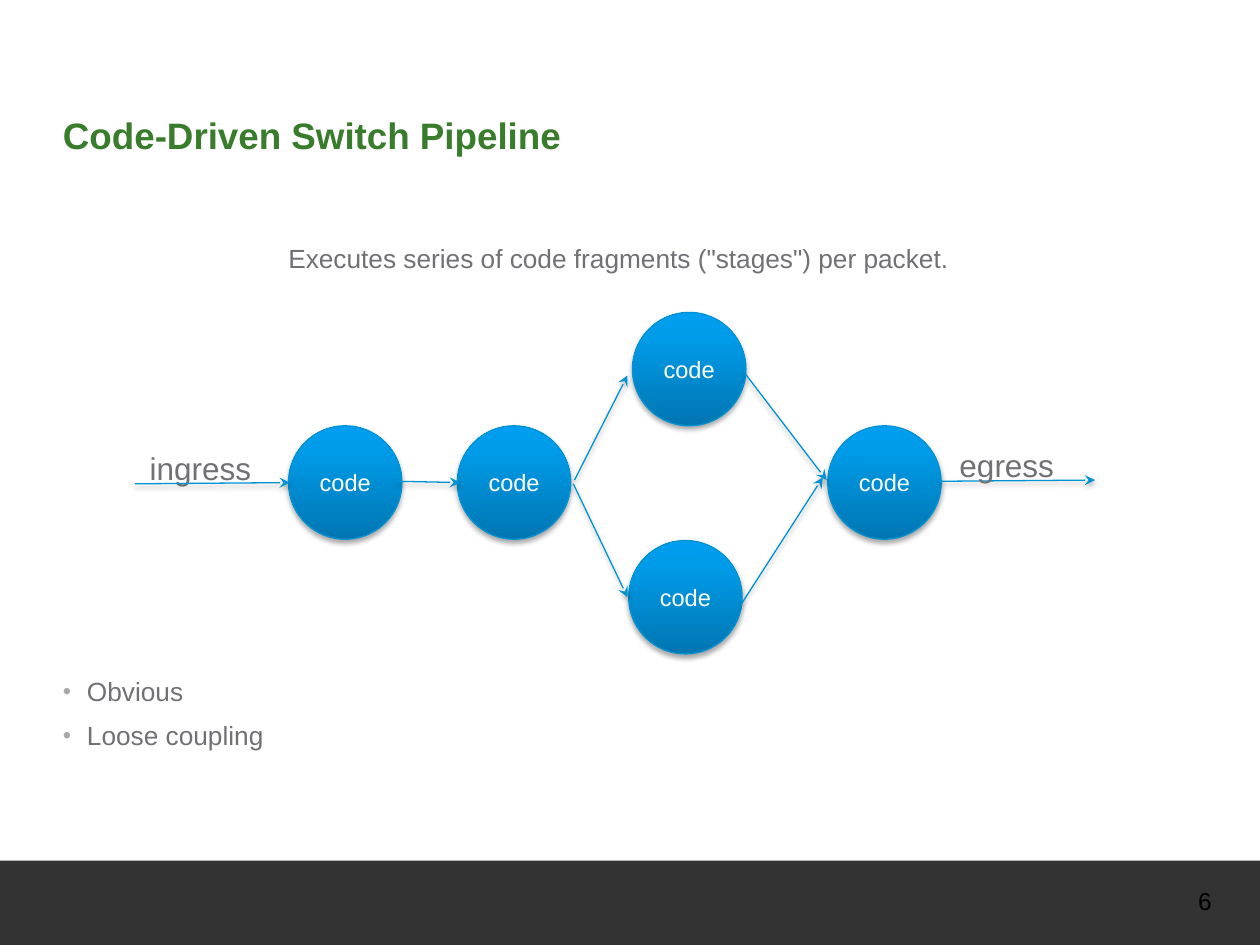
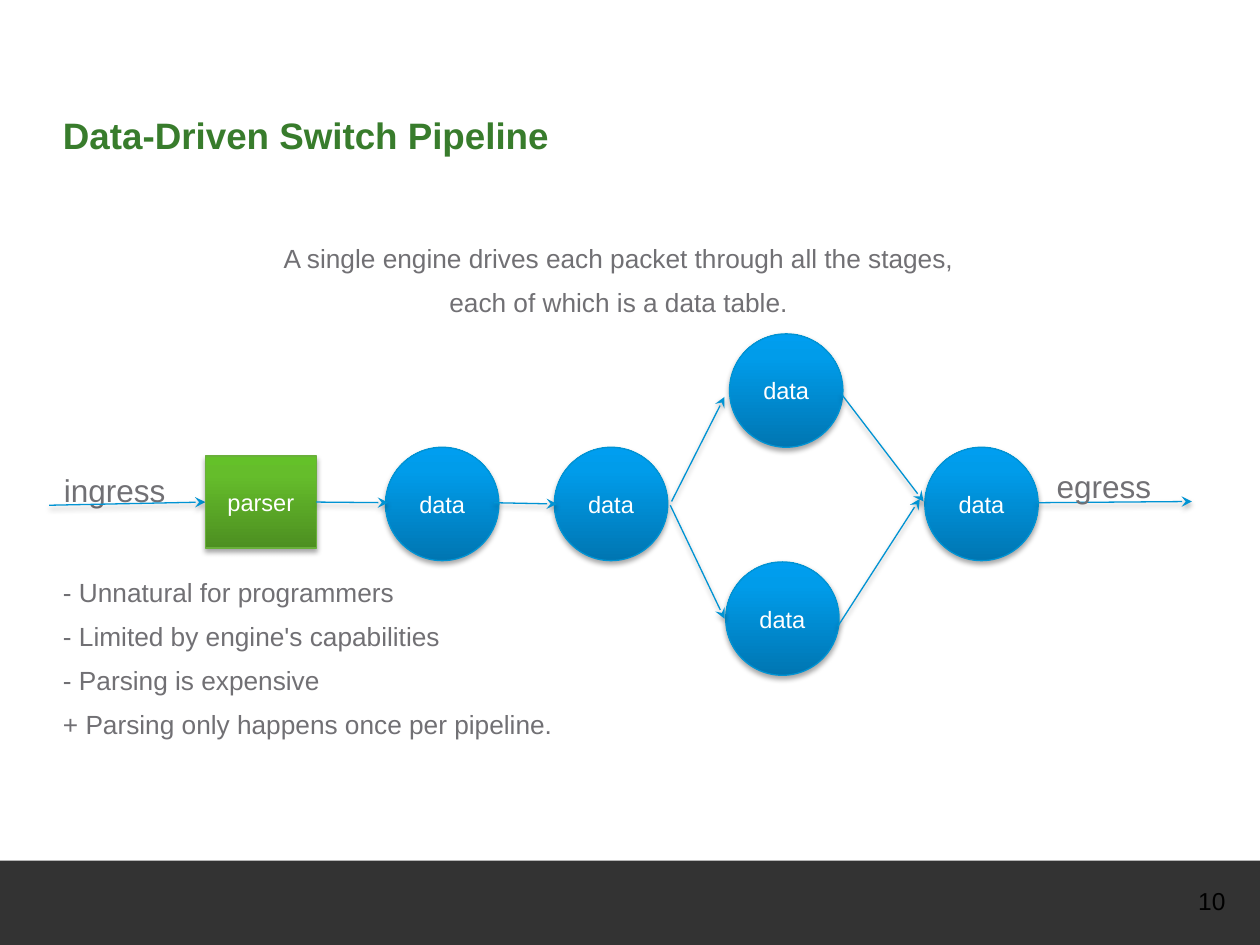
from lxml.etree import SubElement as Sub
from pptx import Presentation
from pptx.dml.color import RGBColor as RGB
from pptx.enum.shapes import MSO_CONNECTOR as Link, MSO_SHAPE as Shape
from pptx.enum.text import MSO_ANCHOR as Anchor, PP_ALIGN as Align
from pptx.oxml.ns import qn
from pptx.util import Inches, Pt

FONT = "Arial"
HUES = {
    "title": "387C2C", "text": "717074", "dot": "A8A8AB", "band": "333333",
    "black": "000000", "white": "FFFFFF", "blue": "0093D3", "green": "69B03A",
}
FADES = {
    "blue": ((0, "0076B2"), (80, "009CEA"), (100, "009EF0")),
    "green": ((0, "4D8F21"), (80, "65BD2B"), (100, "64C129")),
}
SIZE = 0.9
NODES = ((2.29, 3.38), (3.63, 3.38), (5.02, 2.48), (4.99, 4.29), (6.57, 3.38))
ARROWS = (
    (3.15, 3.82, 3.65, 3.83), (4.56, 3.81, 4.98, 2.98),
    (4.55, 3.84, 4.98, 4.74), (5.91, 2.96, 6.56, 3.81),
    (5.88, 4.8, 6.53, 3.79), (7.46, 3.82, 8.69, 3.81),
)


def hue(name):
    """Return the named colour."""
    return RGB.from_string(HUES[name])


def inch(nums):
    """Turn numbers into lengths."""
    return [Inches(num) for num in nums]


def shade(item):
    """Give an item the soft shadow that falls straight down."""
    fx = Sub(item._element.spPr, qn("a:effectLst"))
    drop = Sub(fx, qn("a:outerShdw"), blurRad=str(Pt(3.1)), dist=str(Pt(1.8)),
               dir="5400000", rotWithShape="0")
    tone = Sub(drop, qn("a:srgbClr"), val=HUES["black"])
    Sub(tone, qn("a:alpha"), val="35000")


def fade(item, stops):
    """Fill a shape with a gradient that rises from its foot."""
    item.fill.gradient()
    item.fill.gradient_angle = 90
    rows = item._element.spPr.find(".//" + qn("a:gsLst"))
    rows.clear()
    for pos, tone in stops:
        stop = Sub(rows, qn("a:gs"), pos=str(pos * 1000))
        Sub(stop, qn("a:srgbClr"), val=tone)


def style(para, size, tone, bold=False):
    """Set the font of a paragraph."""
    font = para.font
    font.name, font.size, font.bold = FONT, Pt(size), bold
    font.color.rgb = hue(tone)


def dot(para):
    """Put a grey bullet before a paragraph."""
    prop = para._p.get_or_add_pPr()
    prop.set("marL", str(Inches(0.19)))
    prop.set("indent", str(Inches(-0.19)))
    Sub(Sub(prop, qn("a:buClr")), qn("a:srgbClr"), val=HUES["dot"])
    Sub(prop, qn("a:buSzPct"), val="90000")
    Sub(prop, qn("a:buFont"), typeface=FONT)
    Sub(prop, qn("a:buChar"), char="•")


def write(page, box, lines, size=15, tone="text", align=Align.LEFT,
          anchor=Anchor.TOP, bold=False, dots=False, lead=0.9):
    """Add a text box without margins, one paragraph a line."""
    frame = page.shapes.add_textbox(*inch(box)).text_frame
    frame.word_wrap = True
    frame.vertical_anchor = anchor
    frame.margin_left = frame.margin_right = 0
    frame.margin_top = frame.margin_bottom = 0
    frame.text = "\n".join(lines)
    for num, para in enumerate(frame.paragraphs):
        para.alignment = align
        para.line_spacing = lead
        if num:
            para.space_before = Pt(9)
        if dots:
            dot(para)
        style(para, size, tone, bold)


def node(page, kind, box, label, tone):
    """Add a stage of the pipeline."""
    item = page.shapes.add_shape(kind, *inch(box))
    fade(item, FADES[tone])
    item.line.color.rgb = hue(tone)
    item.line.width = Pt(0.75)
    shade(item)
    frame = item.text_frame
    frame.text = label
    frame.vertical_anchor = Anchor.MIDDLE
    para = frame.paragraphs[0]
    para.alignment = Align.CENTER
    style(para, 13.5, "white")
    return item


def arrow(page, ends):
    """Add a thin arrow."""
    item = page.shapes.add_connector(Link.STRAIGHT, *inch(ends))
    item.line.color.rgb = hue("blue")
    item.line.width = Pt(0.75)
    Sub(item.line._get_or_add_ln(), qn("a:tailEnd"), type="stealth")
    shade(item)
    return item


def flow(page, label, left, dx=0, dy=0):
    """Draw the pipeline moved by dx and dy, and return the ingress arrow."""
    for x, y in NODES:
        node(page, Shape.OVAL, (x + dx, y + dy, SIZE, SIZE), label, "blue")
    for x1, y1, x2, y2 in ARROWS:
        arrow(page, (x1 + dx, y1 + dy, x2 + dx, y2 + dy))
    names = (("ingress", left - 0.04, 3.6), ("egress", 7.43 + dx, 3.57))
    for name, x, y in names:
        write(page, (x, y + dy, 1.12, 0.27), [name], 18, align=Align.CENTER)
    return arrow(page, (left, 3.84 + dy, left + 1.23, 3.83 + dy))


def start(deck, title, number, intro):
    """Add a slide with its band, title, number and opening lines."""
    page = deck.slides.add_slide(deck.slide_layouts[6])
    band = page.shapes.add_shape(Shape.RECTANGLE, *inch((0, 6.83, 10, 0.67)))
    band.fill.solid()
    band.fill.fore_color.rgb = hue("band")
    band.line.fill.background()
    shade(band)
    write(page, (0.5, 0.36, 9, 0.89), [title], 21, "title",
          anchor=Anchor.BOTTOM, bold=True)
    write(page, (9.51, 7.07, 0.37, 0.16), [number], 14, "black",
          anchor=Anchor.MIDDLE, lead=1.0)
    write(page, (0.41, 1.95, 9, 0.56), intro, align=Align.CENTER)
    return page


def main():
    """Build both slides."""
    deck = Presentation()
    deck.slide_width, deck.slide_height = inch((10, 7.5))

    page = start(deck, "Code-Driven Switch Pipeline", "6",
                 ['Executes series of code fragments ("stages") per packet.'])
    write(page, (0.5, 5.39, 9, 1.2), ["Obvious", "Loose coupling"], dots=True)
    flow(page, "code", 1.07)

    page = start(deck, "Data-Driven Switch Pipeline", "10",
                 ["A single engine drives each packet through all the stages,",
                  "each of which is a data table."])
    write(page, (0.5, 4.6, 9, 1.98),
          ["- Unnatural for programmers",
           "- Limited by engine's capabilities",
           "- Parsing is expensive",
           "+ Parsing only happens once per pipeline."])
    entry = flow(page, "data", 0.39, 0.77, 0.17)
    gate = node(page, Shape.RECTANGLE, (1.63, 3.62, 0.88, 0.73), "parser",
                "green")
    entry.end_connect(gate, 1)
    arrow(page, (2.53, 4, 3.08, 3.99)).begin_connect(gate, 3)

    deck.save("out.pptx")


if __name__ == "__main__":
    main()
